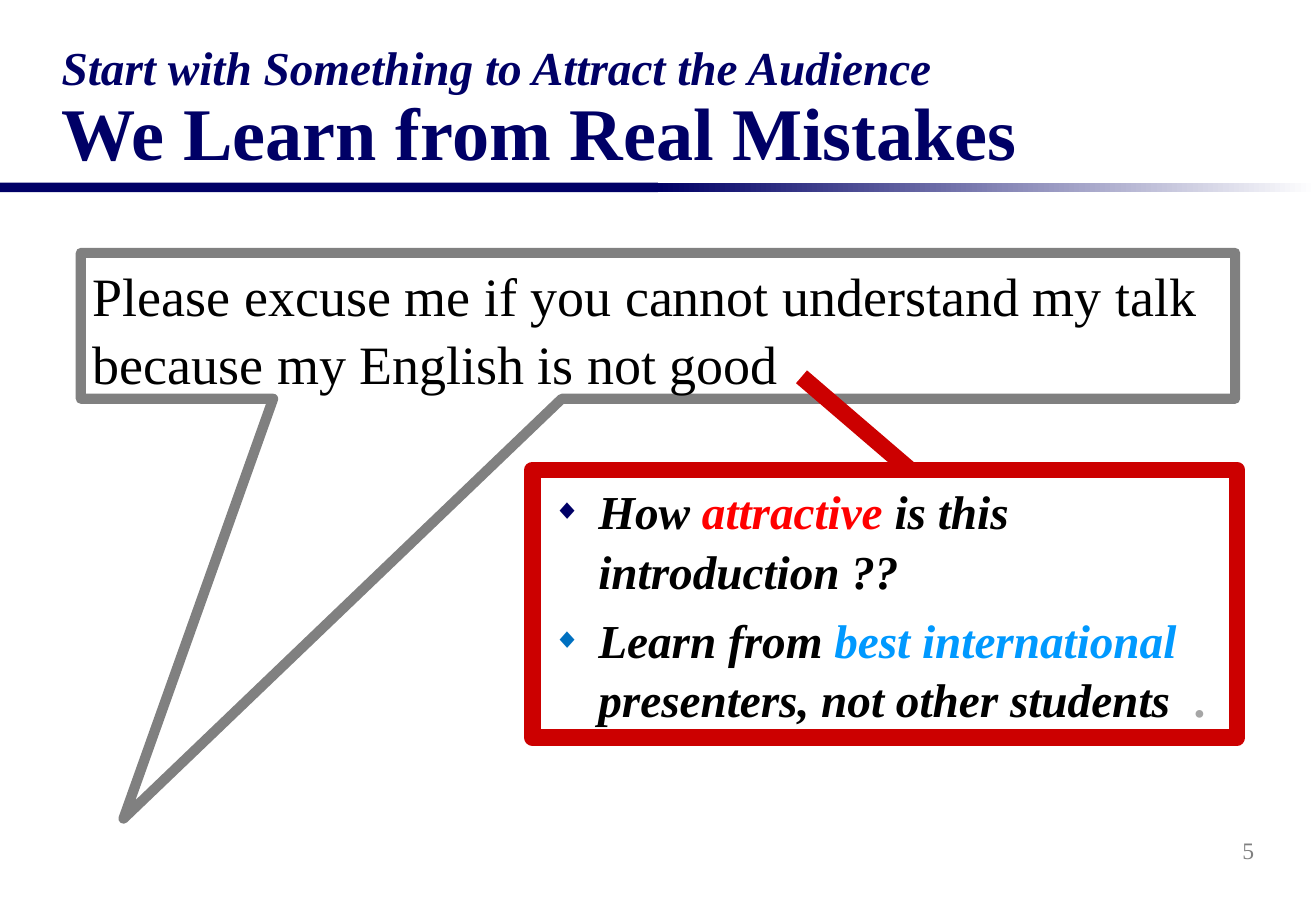
from lxml import etree
from pptx import Presentation
from pptx.dml.color import RGBColor
from pptx.enum.shapes import MSO_SHAPE
from pptx.enum.text import MSO_ANCHOR, PP_ALIGN
from pptx.oxml.ns import qn
from pptx.util import Cm, Pt

RECT = MSO_SHAPE.RECTANGLE
SPEECH = MSO_SHAPE.RECTANGULAR_CALLOUT
LINE_CALLOUT = MSO_SHAPE.LINE_CALLOUT_1
TOP, MIDDLE, BOTTOM = MSO_ANCHOR.TOP, MSO_ANCHOR.MIDDLE, MSO_ANCHOR.BOTTOM
LEFT, RIGHT = PP_ALIGN.LEFT, PP_ALIGN.RIGHT

FONT = "Times New Roman"
SLIDE_W, SLIDE_H = 27.51, 19.05
COLORS = {
    "navy": "000066", "white": "FFFFFF", "gray": "808080", "black": "000000",
    "crimson": "CC0000", "red": "FF0000", "sky": "0099FF", "blue": "0070C0",
    "silver": "A6A6A6",
}


def rgb(name):
    return RGBColor.from_string(COLORS[name])


def style_run(run, size, color, bold=False, italic=False):
    run.font.name = FONT
    run.font.size = Pt(size)
    run.font.bold = bold
    run.font.italic = italic
    run.font.color.rgb = rgb(color)


def add_text_box(slide, box, anchor):
    frame = slide.shapes.add_textbox(*map(Cm, box)).text_frame
    frame.word_wrap = True
    frame.vertical_anchor = anchor
    return frame


def add_outlined(slide, kind, box, fill, line=None, width=0, adjustments=()):
    """Add a flat shape; without a line colour it has no outline."""
    shape = slide.shapes.add_shape(kind, *map(Cm, box))
    shape.shadow.inherit = False
    shape.fill.solid()
    shape.fill.fore_color.rgb = rgb(fill)
    if line:
        shape.line.color.rgb = rgb(line)
        shape.line.width = Pt(width)
    else:
        shape.line.fill.background()
    for index, value in enumerate(adjustments):
        shape.adjustments[index] = value
    return shape


def add_bullet(paragraph, color):
    """Give the paragraph a small diamond with a hanging indent."""
    props = paragraph._p.get_or_add_pPr()
    indent = Cm(0.95)
    props.set("marL", str(indent))
    props.set("indent", str(-indent))
    bullet_color = etree.SubElement(props, qn("a:buClr"))
    etree.SubElement(bullet_color, qn("a:srgbClr"), val=COLORS[color])
    etree.SubElement(props, qn("a:buSzPct"), val="60000")
    etree.SubElement(props, qn("a:buFont"), typeface=FONT)
    etree.SubElement(props, qn("a:buChar"), char="◆")


def add_divider(slide, box):
    """Draw a bar that is solid on its left half and fades out on its right."""
    left, top, width, height = box
    half = width / 2
    add_outlined(slide, RECT, (left, top, half, height), "navy")
    fade = add_outlined(slide, RECT, (left + half, top, half, height), "navy")
    fade.fill.gradient()
    fade.fill.gradient_angle = 0
    for stop, color, position in zip(fade.fill.gradient_stops, ("navy", "white"), (0, 1)):
        stop.color.rgb = rgb(color)
        stop.position = position


def add_title(slide, box):
    title = add_text_box(slide, box, BOTTOM).paragraphs[0]
    title.text = "Start with Something to Attract the Audience\vWe Learn from Real Mistakes"
    title.line_spacing = 0.9
    kicker, headline = title.runs
    style_run(kicker, 28, "navy", bold=True, italic=True)
    style_run(headline, 44, "navy", bold=True)


def add_speech(slide, box):
    bubble = add_outlined(slide, SPEECH, box, "white", "gray", 6, (-0.463, 3.379))
    frame = bubble.text_frame
    frame.word_wrap = True
    frame.vertical_anchor = TOP
    quote = frame.paragraphs[0]
    quote.text = ("Please excuse me if you cannot understand my talk "
                  "because my English is not good")
    quote.alignment = LEFT
    quote.line_spacing = 1.05
    style_run(quote.runs[0], 32, "black")


def add_advice(slide, box):
    left, top, width, height = box
    add_outlined(slide, LINE_CALLOUT, box, "white", "crimson", 10,
                 (0.002, 0.537, -0.349, 0.382))
    points = [
        ("navy", [("How ", "black"), ("attractive", "red"),
                  (" is this introduction ??", "black")]),
        ("blue", [("Learn from ", "black"), ("best international", "sky"),
                  (" presenters, not other students  ", "black"), (".", "silver")]),
    ]
    frame = add_text_box(slide, (left + 0.18, top + 0.08, width, height - 0.3), TOP)
    for index, (bullet, parts) in enumerate(points):
        point = frame.add_paragraph() if index else frame.paragraphs[0]
        point.line_spacing = 1.05
        point.space_before = Pt(5.6 if index else 0)
        add_bullet(point, bullet)
        for words, color in parts:
            run = point.add_run()
            run.text = words
            style_run(run, 28, color, bold=True, italic=color != "silver")


def add_page_number(slide, box):
    number = add_text_box(slide, box, MIDDLE).paragraphs[0]
    number.text = "5"
    number.alignment = RIGHT
    style_run(number.runs[0], 14, "gray")


def main():
    deck = Presentation()
    deck.slide_width, deck.slide_height = Cm(SLIDE_W), Cm(SLIDE_H)
    slide = deck.slides.add_slide(deck.slide_layouts[6])
    add_divider(slide, (0, 3.82, SLIDE_W, 0.2))
    add_page_number(slide, (20.73, 17.15, 5.74, 1.27))
    add_title(slide, (1.04, 0.74, 25.4, 3.07))
    add_speech(slide, (1.69, 5.29, 24.13, 3.05))
    add_advice(slide, (11.13, 9.83, 14.73, 5.59))
    deck.save("out.pptx")


if __name__ == "__main__":
    main()
